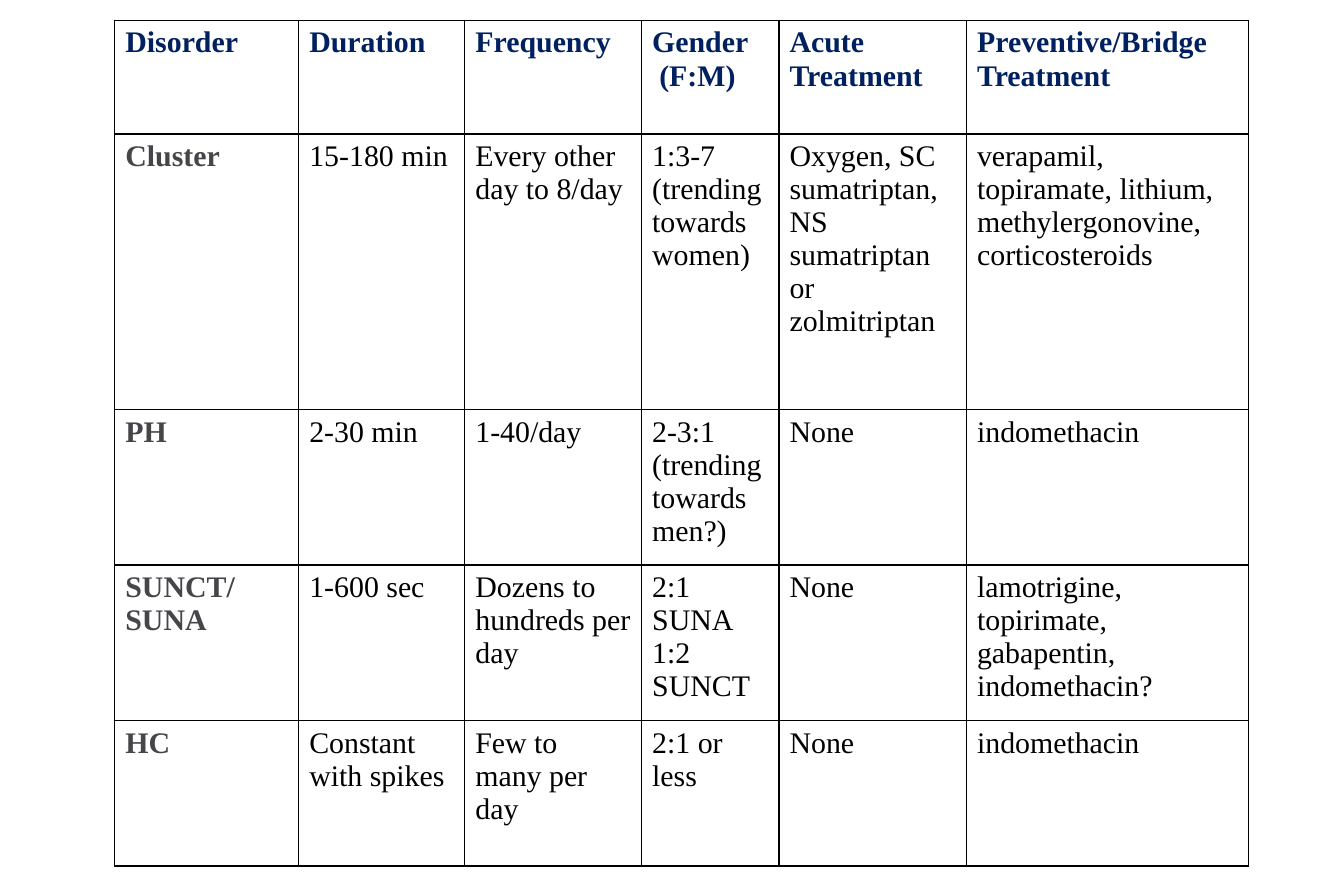
from dataclasses import dataclass

import pptx
import pptx.dml.color
import pptx.oxml
import pptx.oxml.ns
import pptx.util
from pptx.util import Inches

COLORS = {"header": "002060", "disorder": "46464A", "body": "000000", "border": "000000"}
FONT = "Times New Roman"
COL_WIDTHS = [1.54, 1.39, 1.48, 1.15, 1.57, 2.36]
HEADERS = ["Disorder", "Duration", "Frequency", "Gender (F:M)",
           "Acute Treatment", "Preventive/Bridge Treatment"]
GENDER_COL = HEADERS.index("Gender (F:M)")


@dataclass
class Row:
    height: float
    texts: list[str]


# Each newline starts a new paragraph in the cell
ROWS = [
    Row(0.95, HEADERS),
    Row(2.31, ["Cluster", "15-180 min", "Every other day to 8/day",
               "1:3-7\n(trending towards women)",
               "Oxygen, SC sumatriptan, NS sumatriptan or zolmitriptan",
               "verapamil, topiramate, lithium, methylergonovine, corticosteroids"]),
    Row(1.3, ["PH", "2-30 min", "1-40/day", "2-3:1 (trending towards men?)",
              "None", "indomethacin"]),
    Row(1.3, ["SUNCT/\nSUNA", "1-600 sec", "Dozens to hundreds per day",
              "2:1 SUNA\n1:2 SUNCT", "None",
              "lamotrigine, topirimate, gabapentin, indomethacin?"]),
    Row(1.22, ["HC", "Constant with spikes", "Few to many per day",
               "2:1 or less", "None", "indomethacin"]),
]


def write_text(tf, text: str, *, color: str, bold: bool = False,
               size: float = 18, hanging: float = 0) -> None:
    for i, line in enumerate(text.split("\n")):
        p = tf.paragraphs[0] if i == 0 else tf.add_paragraph()
        if hanging:
            pPr = p._p.get_or_add_pPr()
            pPr.set("marL", str(Inches(hanging)))
            pPr.set("indent", str(-Inches(hanging)))
        r = p.add_run()
        r.text = line
        r.font.name = FONT
        r.font.size = pptx.util.Pt(size)
        r.font.bold = bold
        r.font.color.rgb = pptx.dml.color.RGBColor.from_string(COLORS[color])


def set_borders(cell, color: str, width: float) -> None:
    tcPr = cell._tc.get_or_add_tcPr()
    for i, side in enumerate(("lnL", "lnR", "lnT", "lnB")):
        tcPr.insert(i, pptx.oxml.parse_xml(
            f'<a:{side} {pptx.oxml.ns.nsdecls("a")} w="{pptx.util.Pt(width)}">'
            f'<a:solidFill><a:srgbClr val="{COLORS[color]}"/></a:solidFill></a:{side}>'))


def style_cell(cell) -> None:
    cell.margin_left = cell.margin_right = Inches(0.09)
    cell.margin_top = cell.margin_bottom = Inches(0.05)
    cell.fill.background()
    set_borders(cell, "border", 1)


def add_disorder_table(s) -> None:
    table = s.shapes.add_table(
        len(ROWS), len(COL_WIDTHS), Inches(0.96), Inches(0.17),
        Inches(sum(COL_WIDTHS)), Inches(sum(row.height for row in ROWS))).table
    table.first_row = table.horz_banding = False
    for col, width in zip(table.columns, COL_WIDTHS):
        col.width = Inches(width)
    for r, row in enumerate(ROWS):
        table.rows[r].height = Inches(row.height)
        for c, text in enumerate(row.texts):
            cell = table.cell(r, c)
            style_cell(cell)
            color = "header" if r == 0 else "disorder" if c == 0 else "body"
            write_text(cell.text_frame, text, color=color, bold=color != "body",
                       hanging=0.06 if r == 0 and c == GENDER_COL else 0)


def main() -> None:
    # Slide
    prs = pptx.Presentation()
    prs.slide_width, prs.slide_height = Inches(11.25), Inches(7.5)
    s = prs.slides.add_slide(prs.slide_layouts[6])

    # Headache disorder comparison
    add_disorder_table(s)
    prs.save("out.pptx")


if __name__ == "__main__":
    main()
